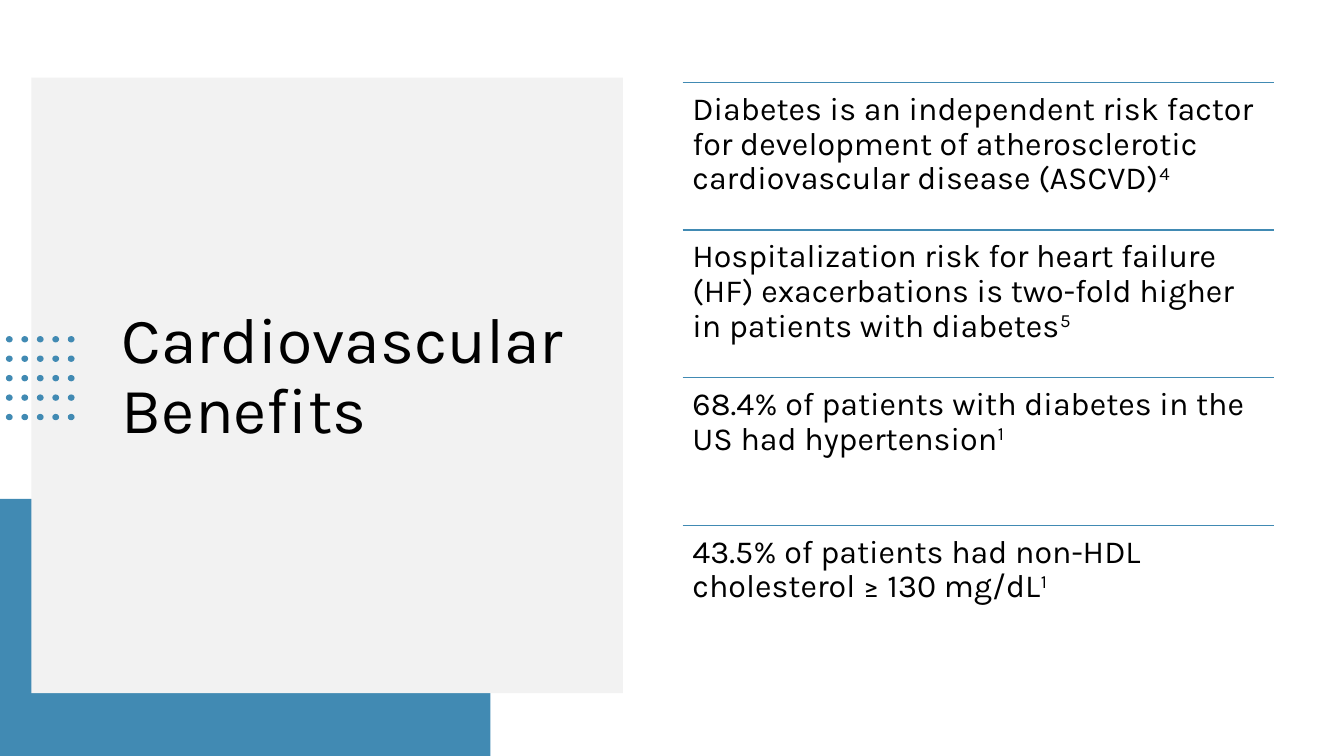
from lxml import etree
from pptx import Presentation
from pptx.dml.color import RGBColor
from pptx.enum.shapes import MSO_CONNECTOR as CONN, MSO_SHAPE as SHAPE
from pptx.enum.text import MSO_ANCHOR as ANCHOR, PP_ALIGN as ALIGN
from pptx.oxml.ns import qn
from pptx.util import Cm, Pt

BLUE, GREY, BLACK = "418AB3", "F2F2F2", "000000"
FONT = "Karla"
FACTS = [
    ("Diabetes is an independent risk factor for development of "
     "atherosclerotic cardiovascular disease (ASCVD)", "4"),
    ("Hospitalization risk for heart failure (HF) exacerbations is "
     "two-fold higher in patients with diabetes", "5"),
    ("68.4% of patients with diabetes in the US had hypertension", "1"),
    ("43.5% of patients had non-HDL cholesterol ≥ 130 mg/dL", "1"),
]


def rgb(color):
    """Turn a hex string into a colour."""
    return RGBColor.from_string(color)


def add_filled(shapes, kind, left, top, width, height, color):
    """Add a borderless preset shape, measured in centimetres."""
    sp = shapes.add_shape(kind, Cm(left), Cm(top), Cm(width), Cm(height))
    sp.shadow.inherit = False
    sp.fill.solid()
    sp.fill.fore_color.rgb = rgb(color)
    sp.line.fill.background()
    return sp


def style(p, size):
    """Format a paragraph in the slide's typeface."""
    p.alignment = ALIGN.LEFT
    p.line_spacing = 0.9
    p.font.name = FONT
    p.font.size = Pt(size)
    p.font.color.rgb = rgb(BLACK)


def place_title(s, text):
    """Fill the title placeholder and bring it in front of the panel."""
    sp = s.shapes.title
    sp.left, sp.top, sp.width, sp.height = Cm(2.82), Cm(3.73), Cm(11.66), Cm(11.58)
    tf = sp.text_frame
    tf.text = text
    tf.word_wrap = True
    tf.vertical_anchor = ANCHOR.MIDDLE
    style(tf.paragraphs[0], 46)
    s.shapes.element.append(sp.element)


def add_dots(s, count=5):
    """Add a square grid of small dots as one group."""
    group = s.shapes.add_group_shape()
    for col in range(count):
        for row in range(count):
            add_filled(group.shapes, SHAPE.OVAL, 0.15 + 0.39 * col,
                       8.47 + 0.49 * row, 0.17, 0.16, BLUE)


def add_rule(shapes, left, top, width):
    """Add a thin horizontal line."""
    line = shapes.add_connector(CONN.STRAIGHT, Cm(left), Cm(top),
                                Cm(left + width), Cm(top))
    line.line.color.rgb = rgb(BLUE)
    line.line.width = Pt(1)
    etree.SubElement(line.element.spPr, qn("a:effectLst"))


def add_fact(shapes, left, top, width, height, text, ref):
    """Add a statement ending in a superscript reference."""
    tf = shapes.add_textbox(Cm(left), Cm(top), Cm(width), Cm(height)).text_frame
    tf.word_wrap = True
    tf.margin_left = tf.margin_right = tf.margin_top = tf.margin_bottom = Cm(0.25)
    p = tf.paragraphs[0]
    p.add_run().text = text
    r = p.add_run()
    r.text = ref
    r.font._element.set("baseline", "30000")
    style(p, 23)


def add_facts(s):
    """Stack the ruled statements at an even pitch."""
    left, top, width, pitch = 17.2, 2.08, 14.91, 3.72
    group = s.shapes.add_group_shape()
    for i, (text, ref) in enumerate(FACTS):
        y = top + i * pitch
        add_rule(group.shapes, left, y, width)
        add_fact(group.shapes, left, y, width, pitch, text, ref)


def main():
    """Build and save the slide."""
    prs = Presentation()
    prs.slide_width, prs.slide_height = Cm(33.87), Cm(19.05)
    s = prs.slides.add_slide(prs.slide_layouts[5])
    add_filled(s.shapes, SHAPE.RECTANGLE, 0, 12.57, 12.36, 6.48, BLUE)
    add_filled(s.shapes, SHAPE.RECTANGLE, 0.79, 1.96, 14.91, 15.51, GREY)
    place_title(s, "Cardiovascular Benefits")
    add_dots(s)
    add_facts(s)
    prs.save("out.pptx")


if __name__ == "__main__":
    main()
